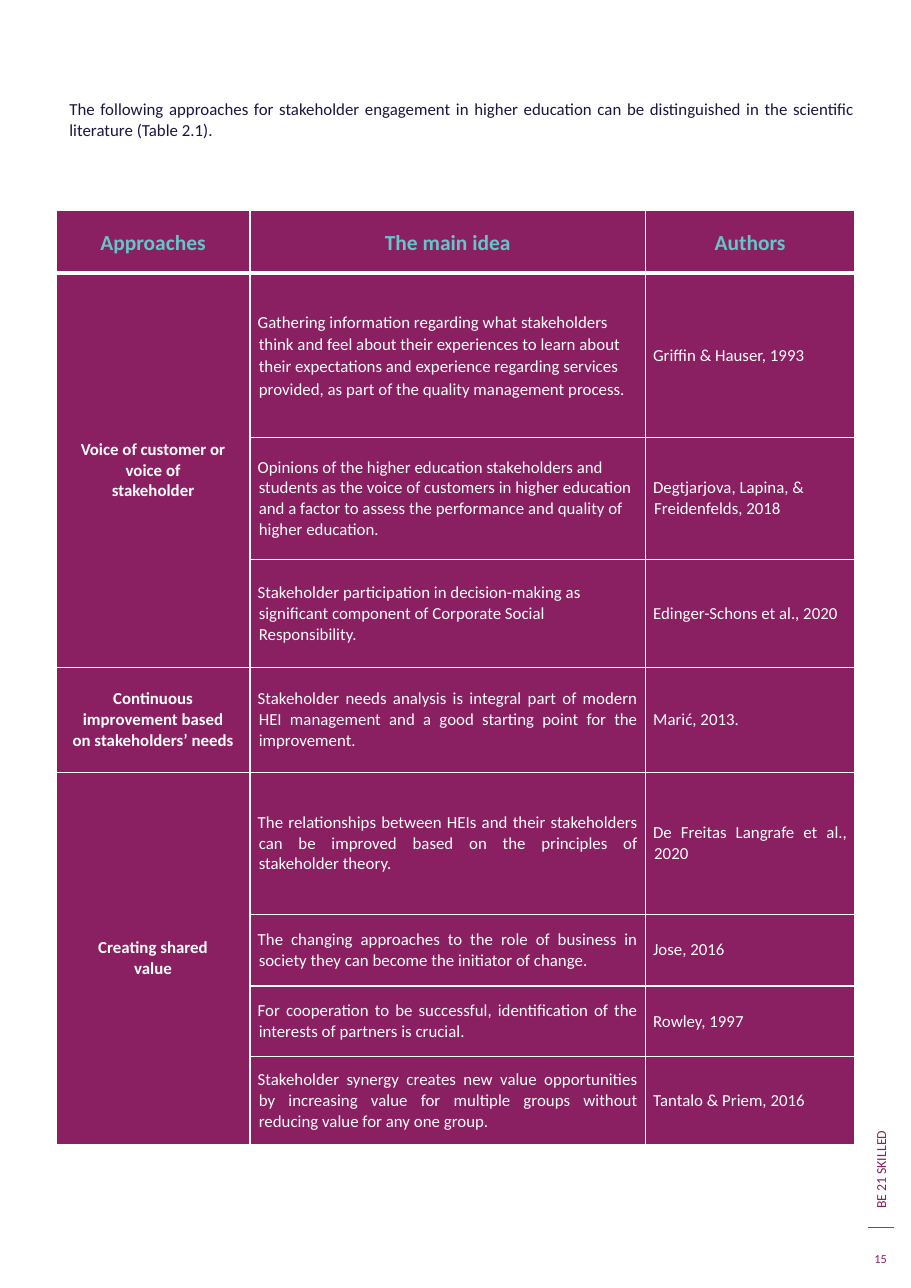
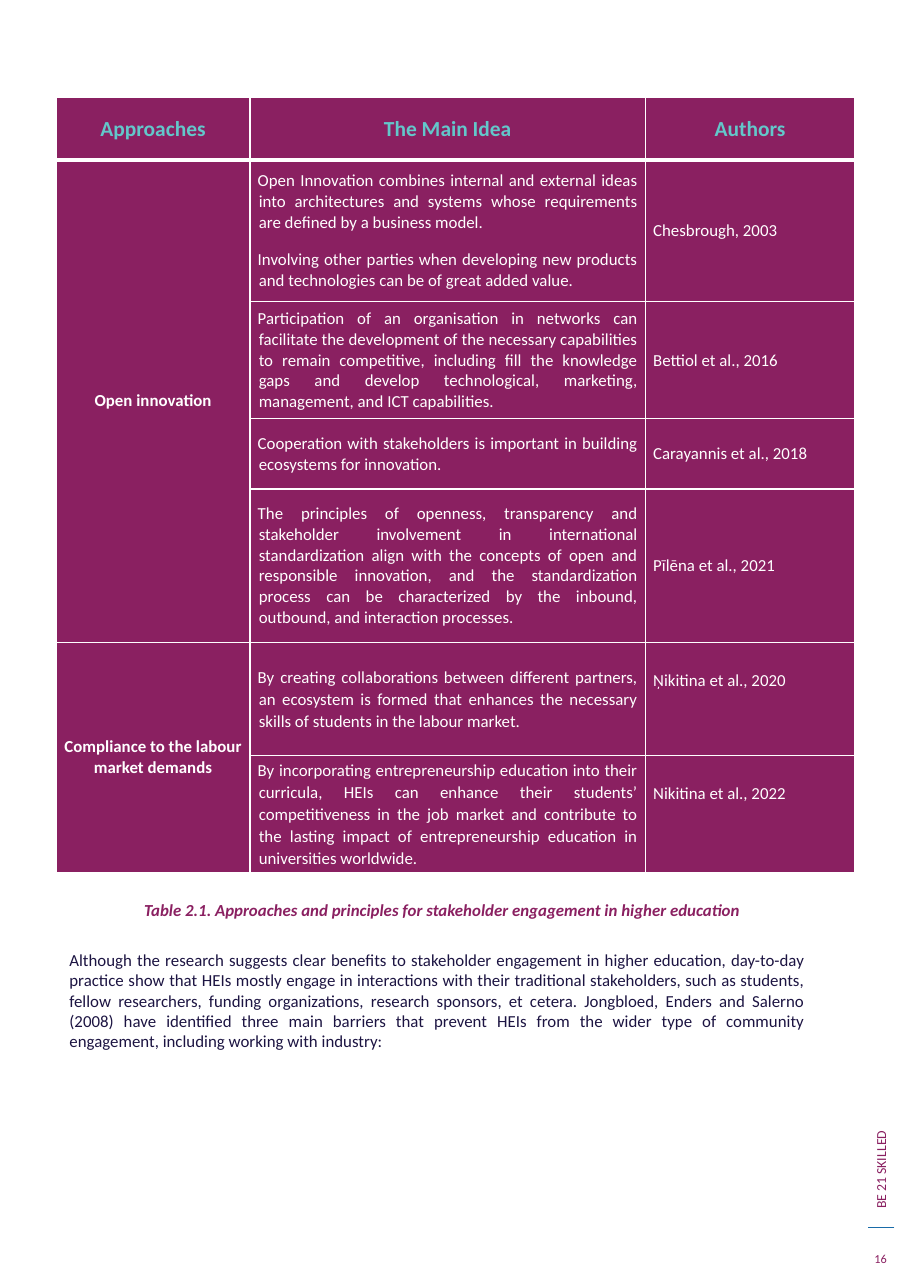
import pptx
import pptx.util
import pptx.dml.color
import pptx.enum.text
import pptx.enum.shapes
import pptx.oxml
import pptx.oxml.ns
import lxml.etree

Inches = pptx.util.Inches
Pt = pptx.util.Pt
ALIGN = pptx.enum.text.PP_ALIGN
ANCHOR = pptx.enum.text.MSO_ANCHOR

# Shared colours and table columns
PLUM, TEAL, NAVY, BLUE, WHITE = "8A2061", "63C7CA", "1C1442", "186BA8", "FFFFFF"
LEFT = 0.51
COLS = [1.76, 3.59, 1.9]
HEAD = 0.57


def rgb(code):
    return pptx.dml.color.RGBColor.from_string(code)


def write(frame, text, size, hue, align=ALIGN.LEFT, bold=False, italic=False,
          space=1.0, margin=0, indent=0):
    """Write one paragraph per line of text."""
    frame.word_wrap = True
    for n, line in enumerate(text.split("\n")):
        para = frame.paragraphs[0] if n == 0 else frame.add_paragraph()
        props = para._p.get_or_add_pPr()
        props.set("marL", str(Inches(margin)))
        props.set("indent", str(Inches(indent)))
        lxml.etree.SubElement(props, pptx.oxml.ns.qn("a:buNone"))
        para.alignment = align
        para.line_spacing = space
        # Centred labels stay tight; running text is set apart
        para.space_before = Pt(10.8 if n and align != ALIGN.CENTER else 0)
        run = para.add_run()
        run.text = line
        font = run.font
        font.name, font.size, font.bold, font.italic = "Calibri", Pt(size), bold, italic
        font.color.rgb = rgb(hue)


# Page contents: groups are (label, rows spanned);
# rows are (height, idea, author, marks)
pages = [
    {
        "num": "15", "top": 1.91, "idea": "The main idea",
        "groups": [
            ("Voice of customer or\nvoice of\nstakeholder", 3),
            ("Continuous\nimprovement based\non stakeholders’ needs", 1),
            ("Creating shared\nvalue", 4),
        ],
        "rows": [
            (1.49, "Gathering information regarding what stakeholders think and feel "
             "about their experiences to learn about their expectations and experience "
             "regarding services provided, as part of the quality management process.",
             "Griffin & Hauser, 1993", "left loose"),
            (1.11, "Opinions of the higher education stakeholders and students as the "
             "voice of customers in higher education and a factor to assess the "
             "performance and quality of higher education.",
             "Degtjarjova, Lapina, & Freidenfelds, 2018", "left"),
            (0.98, "Stakeholder participation in decision-making as significant "
             "component of Corporate Social Responsibility.",
             "Edinger-Schons et al., 2020", "left"),
            (0.95, "Stakeholder needs analysis is integral part of modern HEI management "
             "and a good starting point for the improvement.",
             "Marić, 2013.", ""),
            (1.29, "The relationships between HEIs and their stakeholders can be improved "
             "based on the principles of stakeholder theory.",
             "De Freitas Langrafe et al., 2020", ""),
            (0.65, "The changing approaches to the role of business in society they can "
             "become the initiator of change.",
             "Jose, 2016", ""),
            (0.64, "For cooperation to be successful, identification of the interests of "
             "partners is crucial.",
             "Rowley, 1997", ""),
            (0.8, "Stakeholder synergy creates new value opportunities by increasing value "
             "for multiple groups without reducing value for any one group.",
             "Tantalo & Priem, 2016", ""),
        ],
        "body": (0.85, 7.35, 0.55,
                 "The following approaches for stakeholder engagement in higher education "
                 "can be distinguished in the scientific literature (Table 2.1)."),
    },
    {
        "num": "16", "top": 0.88, "idea": "The Main Idea",
        "groups": [
            ("Open innovation", 4),
            ("Compliance to the labour market demands", 2),
        ],
        "rows": [
            (1.29, "Open Innovation combines internal and external ideas into architectures "
             "and systems whose requirements are defined by a business model.\n"
             "Involving other parties when developing new products and technologies can be "
             "of great added value.",
             "Chesbrough, 2003", ""),
            (1.06, "Participation of an organisation in networks can facilitate the "
             "development of the necessary capabilities to remain competitive, including "
             "fill the knowledge gaps and develop technological, marketing, management, "
             "and ICT capabilities.",
             "Bettiol et al., 2016", ""),
            (0.64, "Cooperation with stakeholders is important in building ecosystems for "
             "innovation.",
             "Carayannis et al., 2018", ""),
            (1.39, "The principles of openness, transparency and stakeholder involvement in "
             "international standardization align with the concepts of open and "
             "responsible innovation, and the standardization process can be "
             "characterized by the inbound, outbound, and interaction processes.",
             "Pīlēna et al., 2021", ""),
            (1.03, "By creating collaborations between different partners, an ecosystem is "
             "formed that enhances the necessary skills of students in the labour market.",
             "Ņikitina et al., 2020", "loose top"),
            (1.06, "By incorporating entrepreneurship education into their curricula, HEIs "
             "can enhance their students’ competitiveness in the job market and "
             "contribute to the lasting impact of entrepreneurship education in "
             "universities worldwide.",
             "Nikitina et al., 2022", "loose top"),
        ],
        "caption": "Table 2.1. Approaches and principles for stakeholder engagement in "
                   "higher education",
        "body": (8.57, 6.9, 2.71,
                 "Although the research suggests clear benefits to stakeholder engagement in "
                 "higher education, day-to-day practice show that HEIs mostly engage in "
                 "interactions with their traditional stakeholders, such as students, fellow "
                 "researchers, funding organizations, research sponsors, et cetera. "
                 "Jongbloed, Enders and Salerno (2008) have identified three main barriers "
                 "that prevent HEIs from the wider type of community engagement, including "
                 "working with industry:"),
    },
]

deck = pptx.Presentation()
deck.slide_width, deck.slide_height = Inches(8.27), Inches(11.69)
layout = deck.slide_layouts[1]

for page in pages:
    slide = deck.slides.add_slide(layout)
    shapes = slide.shapes
    title = shapes.title._element
    title.getparent().remove(title)

    # Side label and rule
    side = shapes.add_textbox(Inches(6.26), Inches(9.21), Inches(3.47), Inches(0.25))
    side.rotation = 270
    write(side.text_frame, "BE 21 SKILLED", 9, PLUM)
    rule = shapes.add_connector(pptx.enum.shapes.MSO_CONNECTOR.STRAIGHT,
                                Inches(8.12), Inches(11.14), Inches(7.88), Inches(11.14))
    rule.line.color.rgb = rgb(BLUE)
    rule.line.width = Pt(0.75)
    lxml.etree.SubElement(rule._element.spPr, pptx.oxml.ns.qn("a:effectLst"))

    # Page number
    num = shapes.add_textbox(Inches(7.8), Inches(11.28), Inches(0.39), Inches(0.29))
    num.text_frame.vertical_anchor = ANCHOR.MIDDLE
    write(num.text_frame, page["num"], 8, PLUM, ALIGN.CENTER)

    # Table grid
    rows = page["rows"]
    tall = [HEAD] + [row[0] for row in rows]
    table = shapes.add_table(len(tall), len(COLS), Inches(LEFT), Inches(page["top"]),
                             Inches(sum(COLS)), Inches(sum(tall))).table
    table.horz_banding = False
    for col, width in zip(table.columns, COLS):
        col.width = Inches(width)
    for row, height in zip(table.rows, tall):
        row.height = Inches(height)

    # Cell borders, fills and margins
    for r in range(len(tall)):
        for c in range(len(COLS)):
            cell = table.cell(r, c)
            cell.margin_left = cell.margin_right = Inches(0.07)
            cell.margin_top = cell.margin_bottom = 0
            cell.vertical_anchor = ANCHOR.MIDDLE
            for edge in "LRTB":
                thick = (r == 0 and edge == "B") or (r == 1 and edge == "T")
                cell._tc.get_or_add_tcPr().append(pptx.oxml.parse_xml(
                    f'<a:ln{edge} {pptx.oxml.ns.nsdecls("a")} w="{Pt(3 if thick else 1)}">'
                    f'<a:solidFill><a:srgbClr val="{WHITE}"/></a:solidFill></a:ln{edge}>'))
            cell.fill.solid()
            cell.fill.fore_color.rgb = rgb(PLUM)

    # Header row
    for c, text in enumerate(["Approaches", page["idea"], "Authors"]):
        write(table.cell(0, c).text_frame, text, 14, TEAL, ALIGN.CENTER, True, space=1.07)

    # Approach labels
    r = 1
    for label, span in page["groups"]:
        cell = table.cell(r, 0)
        if span > 1:
            cell.merge(table.cell(r + span - 1, 0))
        write(cell.text_frame, label, 11, WHITE, ALIGN.CENTER, True)
        r += span

    # Ideas and authors
    for r, (height, idea, author, marks) in enumerate(rows, 1):
        align = ALIGN.LEFT if "left" in marks else ALIGN.JUSTIFY
        space = 1.07 if "loose" in marks else 1.0
        for c, text in [(1, idea), (2, author)]:
            write(table.cell(r, c).text_frame, text, 11, WHITE, align, space=space,
                  margin=0.01, indent=-0.01)
        if "top" in marks:
            table.cell(r, 2).vertical_anchor = ANCHOR.TOP
            table.cell(r, 2).margin_top = Inches(0.24)

    # Table caption
    if "caption" in page:
        note = shapes.add_textbox(Inches(1.01), Inches(8.1), Inches(6.25), Inches(0.32))
        write(note.text_frame, page["caption"], 11, PLUM, ALIGN.JUSTIFY, True, True,
              space=1.07, margin=0.2)

    # Body text
    top, width, height, text = page["body"]
    body = slide.placeholders[1]
    body.left, body.top = Inches(LEFT), Inches(top)
    body.width, body.height = Inches(width), Inches(height)
    body.text_frame.auto_size = pptx.enum.text.MSO_AUTO_SIZE.NONE
    write(body.text_frame, text, 11, NAVY, ALIGN.JUSTIFY, margin=0.02)

deck.save("out.pptx")
